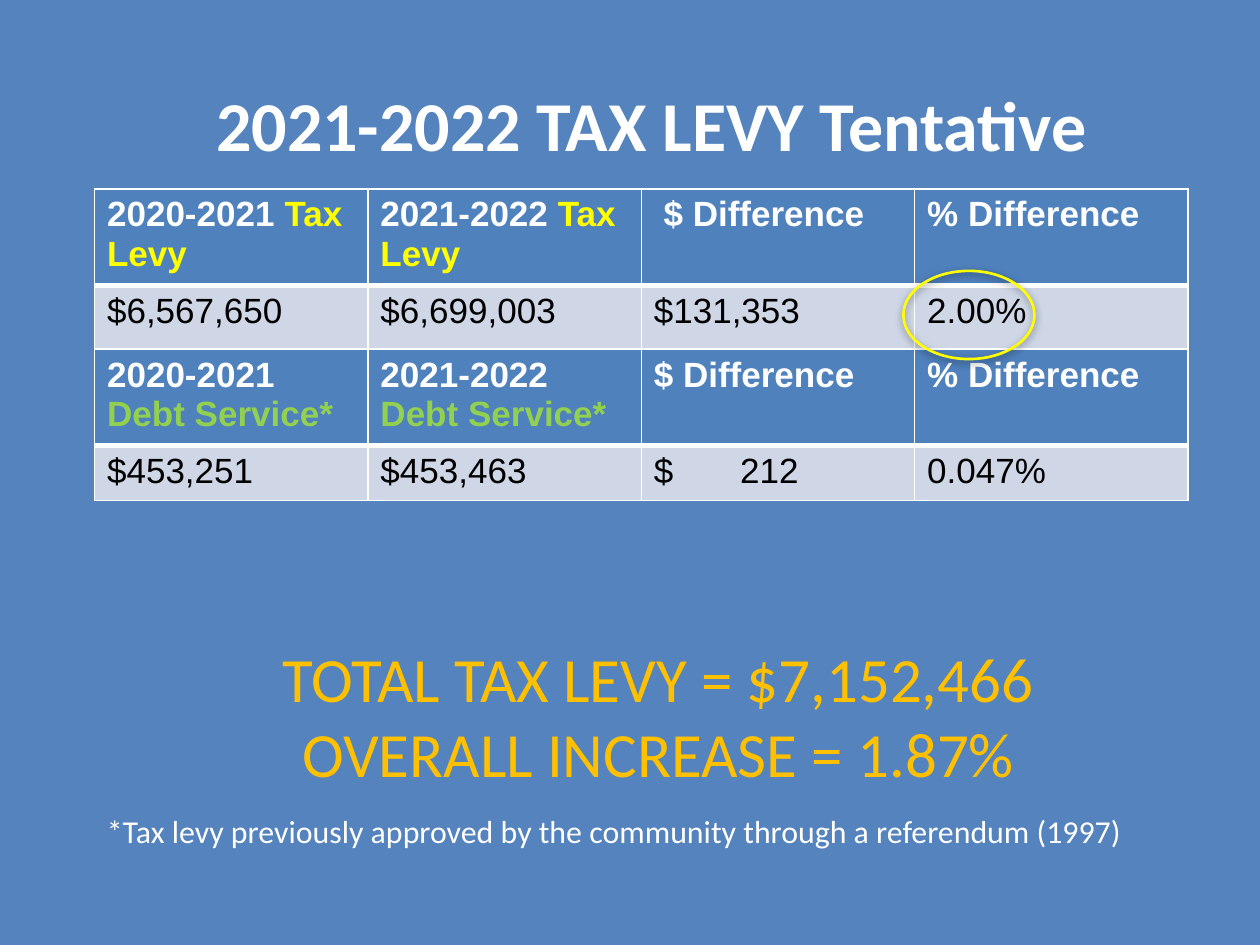
from lxml import etree
from pptx import Presentation
from pptx.dml.color import RGBColor
from pptx.enum.shapes import MSO_SHAPE
from pptx.enum.text import MSO_ANCHOR, PP_ALIGN
from pptx.oxml import parse_xml
from pptx.oxml.ns import nsdecls, qn
from pptx.util import Inches, Pt

OVAL = MSO_SHAPE.OVAL
LEFT, CENTER = PP_ALIGN.LEFT, PP_ALIGN.CENTER
TOP, BOTTOM = MSO_ANCHOR.TOP, MSO_ANCHOR.BOTTOM
WHITE, BLACK, YELLOW, GREEN, GOLD = "FFFFFF", "000000", "FFFF00", "92D050", "FFC000"
BACKGROUND, HEADER_FILL, VALUE_FILL = "5483BE", "4F81BD", "CFD7E7"
TABLE_LEFT, COLUMN_WIDTH = 0.75, 2.17
AMOUNT_TAB = 1.15


def color(value):
    return RGBColor.from_string(value)


class LevySlide:
    heading_font = "Calibri"
    table_font = "Arial"
    table_size = 20

    def __init__(self, deck):
        self.page = deck.slides.add_slide(deck.slide_layouts[6])
        fill = self.page.background.fill
        fill.solid()
        fill.fore_color.rgb = color(BACKGROUND)

    def span(self, para, text, size, tint, font, bold=False):
        span = para.add_run()
        span.text = text
        span.font.size = Pt(size)
        span.font.name = font
        span.font.bold = bold
        span.font.color.rgb = color(tint)

    def text(self, left, top, width, height, lines, anchor=TOP, bottom=0.05):
        box = self.page.shapes.add_textbox(
            Inches(left), Inches(top), Inches(width), Inches(height))
        frame = box.text_frame
        frame.word_wrap = True
        frame.vertical_anchor = anchor
        frame.margin_bottom = Inches(bottom)
        for index, (text, size, tint, bold, align, spacing, before, indent) in enumerate(lines):
            para = frame.paragraphs[0] if index == 0 else frame.add_paragraph()
            para.alignment = align
            para.line_spacing = spacing
            para.space_before = Pt(before)
            para._p.get_or_add_pPr().set("marL", str(Inches(indent)))
            self.span(para, text, size, tint, self.heading_font, bold)

    def cell(self, cell, spans, fill, bold, bottom_width):
        para = cell.text_frame.paragraphs[0]
        for text, tint in spans:
            self.span(para, text, self.table_size, tint, self.table_font, bold)
            if "\t" in text:
                stops = etree.SubElement(para._p.get_or_add_pPr(), qn("a:tabLst"))
                etree.SubElement(stops, qn("a:tab"), pos=str(Inches(AMOUNT_TAB)), algn="r")
        properties = cell._tc.get_or_add_tcPr()
        for side in "LRTB":
            width = Pt(bottom_width if side == "B" else 1)
            properties.append(parse_xml(
                f'<a:ln{side} {nsdecls("a")} w="{width}"><a:solidFill>'
                f'<a:srgbClr val="{WHITE}"/></a:solidFill></a:ln{side}>'))
        cell.fill.solid()
        cell.fill.fore_color.rgb = color(fill)

    def table(self, top, row_heights, headers, values):
        table = self.page.shapes.add_table(
            2, len(values), Inches(TABLE_LEFT), Inches(top),
            Inches(COLUMN_WIDTH * len(values)), Inches(sum(row_heights))).table
        table.first_row = table.horz_banding = False
        for row, height in zip(table.rows, row_heights):
            row.height = Inches(height)
        for index, (header, value) in enumerate(zip(headers, values)):
            table.columns[index].width = Inches(COLUMN_WIDTH)
            self.cell(table.cell(0, index), header, HEADER_FILL, True, 3)
            self.cell(table.cell(1, index), [(value, BLACK)], VALUE_FILL, False, 1)

    def ring(self, left, top, width, height):
        ring = self.page.shapes.add_shape(
            OVAL, Inches(left), Inches(top), Inches(width), Inches(height))
        ring.fill.background()
        ring.line.color.rgb = color(YELLOW)
        ring.line.width = Pt(1.5)
        ring.shadow.inherit = False
        effects = ring._element.spPr.find(qn("a:effectLst"))
        effects.append(parse_xml(
            f'<a:outerShdw {nsdecls("a")} blurRad="{Pt(4.5)}" dist="{Pt(1.5)}" '
            f'dir="5400000" rotWithShape="0"><a:srgbClr val="{BLACK}">'
            '<a:alpha val="50000"/></a:srgbClr></a:outerShdw>'))


def year_headers(subject, tint, dollar_label):
    years = [[(f"{year} ", WHITE), (subject, tint)] for year in ("2020-2021", "2021-2022")]
    return years + [[(dollar_label, WHITE)], [("% Difference", WHITE)]]


def main():
    deck = Presentation()
    deck.slide_width, deck.slide_height = Inches(10), Inches(7.5)
    slide = LevySlide(deck)
    slide.text(0.92, 0.6, 8.5, 1.49, [
        ("2021-2022 TAX LEVY Tentative", 40, WHITE, True, CENTER, 1, 0, 0)])
    slide.text(0.75, 4.24, 8.5, 2.83, [
        ("TOTAL TAX LEVY = $7,152,466", 36, GOLD, False, CENTER, 0.8, 8.3, 0.45),
        ("OVERALL INCREASE = 1.87%", 36, GOLD, False, CENTER, 0.8, 8.3, 0.45),
        ("*Tax levy previously approved by the community through a referendum (1997)",
         18.2, WHITE, False, LEFT, 0.8, 16.8, 0),
    ], BOTTOM, 0.33)
    slide.table(1.5, (0.71, 0.56), year_headers("Tax Levy", YELLOW, " $ Difference"),
                ("$6,567,650", "$6,699,003", "$131,353", "2.00%"))
    slide.table(2.77, (0.71, 0.42), year_headers("Debt Service*", GREEN, "$ Difference"),
                ("$453,251", "$453,463", "$\t212", "0.047%"))
    slide.ring(7.17, 2.15, 1.04, 0.7)
    deck.save("out.pptx")


if __name__ == "__main__":
    main()
